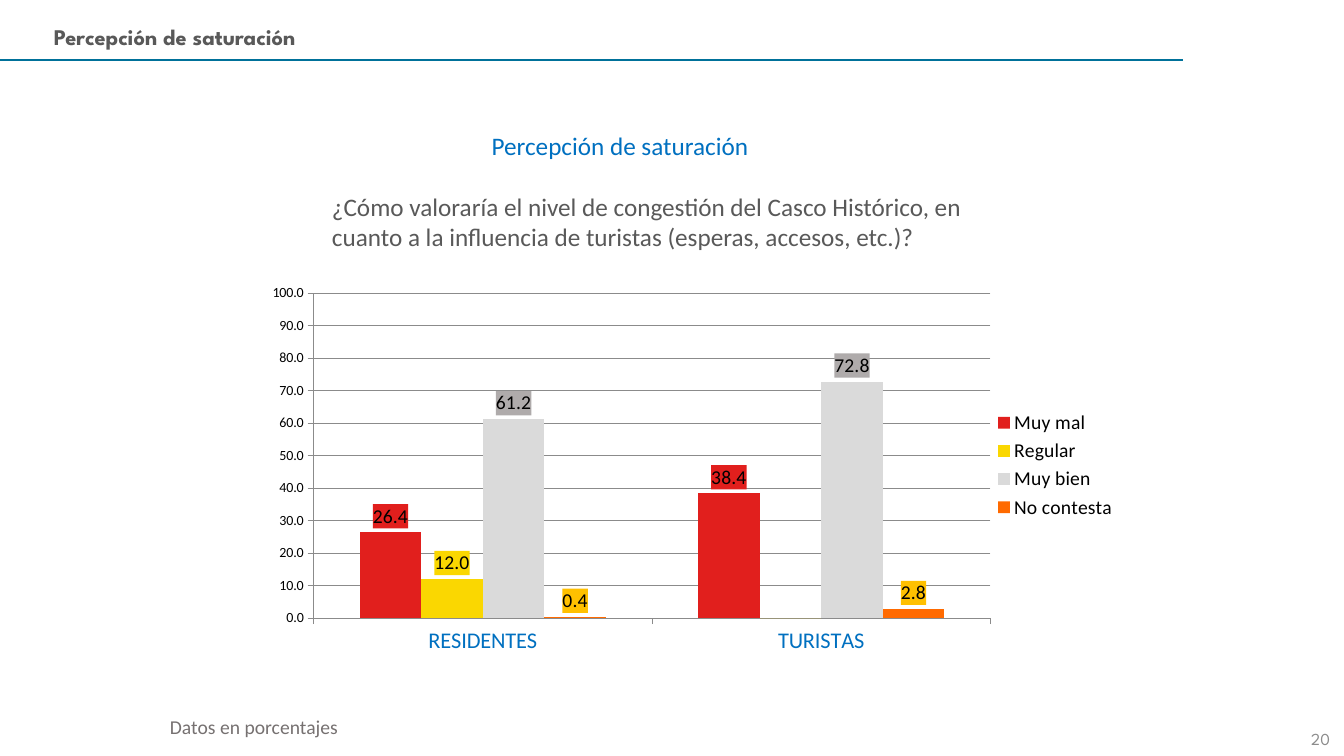
from lxml import etree
from pptx import Presentation
from pptx import util as u
from pptx.chart import data as cd
from pptx.dml import color
from pptx.enum import chart as ch, shapes, text
from pptx.oxml import ns

# left, top, width, height, text, type size, style, alignment, anchor
TEXTS = [
    (44, 18, 1177, 37, "Percepción de saturación", "body", "heading", "LEFT", "TOP"),
    (1038, 714, 302, 40, "20", "small", "number", "RIGHT", "BOTTOM"),
    (160, 125, 920, 40, "Percepción de saturación", "large", "accent", "CENTER", "TOP"),
    (322, 186, 672, 72, "¿Cómo valoraría el nivel de congestión del Casco Histórico, en "
     "cuanto a la influencia de turistas (esperas, accesos, etc.)?", "large", "body", "LEFT", "TOP"),
    (160, 710, 966, 34, "Datos en porcentajes", "medium", "note", "LEFT", "TOP"),
]
RULE = (0, 60, 1183, 60)
CHART_BOX = (258, 258, 869, 414)
PLOT = {"x": 0.064, "y": 0.085, "w": 0.779, "h": 0.785}
GROUPS = ["RESIDENTES", "TURISTAS"]
# name, values, bar colour, label colour
SERIES = [
    ("Muy mal", (26.4, 38.4), "E11F1D", "E11F1D"),
    ("Regular", (12, 0), "FAD701", "FAD701"),
    ("Muy bien", (61.2, 72.8), "DADADA", "AFABAB"),
    ("No contesta", (0.4, 2.8), "FF6A00", "FFC000"),
]
THEME = {
    "sizes": {"tick": 10, "small": 12, "medium": 14, "body": 16, "large": 18},
    "styles": {  # font, colour, bold
        "heading": ("League Spartan", "595959", True),
        "number": ("League Spartan", "8C8C8C", False),
        "accent": ("Calibri", "0070C0", False),
        "body": ("Calibri", "595959", False),
        "note": ("Calibri", "767171", False),
        "chart": ("Calibri", "000000", False),
    },
    "rule": "00719A",
    "grid": "8B8B8B",
}


def px(n):
    return u.Emu(round(n * 914400 / 100.8))


def rgb(value):
    return color.RGBColor.from_string(value)


def set_font(font, size, style):
    font.name, hue, font.bold = THEME["styles"][style]
    font.size = u.Pt(THEME["sizes"][size])
    font.color.rgb = rgb(hue)


def add_text(slide, left, top, width, height, words, size, style, align, anchor):
    tf = slide.shapes.add_textbox(*map(px, (left, top, width, height))).text_frame
    tf.word_wrap = True
    tf.vertical_anchor = getattr(text.MSO_ANCHOR, anchor)
    p = tf.paragraphs[0]
    p.text = words
    p.alignment = getattr(text.PP_ALIGN, align)
    set_font(p.font, size, style)


def add_rule(slide):
    line = slide.shapes.add_connector(shapes.MSO_CONNECTOR.STRAIGHT, *map(px, RULE))
    line.line.color.rgb = rgb(THEME["rule"])
    line.line.width = u.Pt(1)
    etree.SubElement(line._element.spPr, ns.qn("a:effectLst"))


def place_plot(chart):
    """Fix the inner plot area as fractions of the chart."""
    area = chart._chartSpace.chart.plotArea
    for old in area.findall(ns.qn("c:layout")):
        area.remove(old)
    layout = etree.Element(ns.qn("c:layout"))
    manual = etree.SubElement(layout, ns.qn("c:manualLayout"))
    settings = {"layoutTarget": "inner", "xMode": "edge", "yMode": "edge", **PLOT}
    for tag, value in settings.items():
        etree.SubElement(manual, ns.qn("c:" + tag)).set("val", str(value))
    area.insert(0, layout)


def style_labels(series, values, hue):
    """Show values on a coloured ground, leaving out zeros."""
    labels = series.data_labels
    labels.show_value = True
    labels.number_format = "0.0"
    labels.number_format_is_linked = False
    labels.position = ch.XL_LABEL_POSITION.OUTSIDE_END
    set_font(labels.font, "medium", "chart")
    root = labels._element
    sp_pr = etree.Element(ns.qn("c:spPr"))
    fill = etree.SubElement(sp_pr, ns.qn("a:solidFill"))
    etree.SubElement(fill, ns.qn("a:srgbClr")).set("val", hue)
    root.find(ns.qn("c:numFmt")).addnext(sp_pr)
    for i, value in enumerate(values):
        if value == 0:
            label = etree.Element(ns.qn("c:dLbl"))
            etree.SubElement(label, ns.qn("c:idx")).set("val", str(i))
            etree.SubElement(label, ns.qn("c:delete")).set("val", "1")
            root.insert(0, label)


def add_ratings_chart(slide):
    data = cd.CategoryChartData(number_format="0.0")
    data.categories = GROUPS
    for name, values, *_ in SERIES:
        data.add_series(name, values)
    chart = slide.shapes.add_chart(
        ch.XL_CHART_TYPE.COLUMN_CLUSTERED, *map(px, CHART_BOX), data).chart
    chart.has_title = False
    set_font(chart.font, "tick", "chart")
    chart.has_legend = True
    chart.legend.position = ch.XL_LEGEND_POSITION.RIGHT
    chart.legend.include_in_layout = False
    set_font(chart.legend.font, "medium", "chart")

    cat, val = chart.category_axis, chart.value_axis
    val.minimum_scale, val.maximum_scale, val.major_unit = 0, 100, 10
    val.has_major_gridlines = True
    val.tick_labels.number_format = "0.0"
    val.tick_labels.number_format_is_linked = False
    for axis, size, style in ((cat, "body", "accent"), (val, "tick", "chart")):
        axis.major_tick_mark = ch.XL_TICK_MARK.OUTSIDE
        set_font(axis.tick_labels.font, size, style)
    for part in (cat, val, val.major_gridlines):
        part.format.line.color.rgb = rgb(THEME["grid"])
        part.format.line.width = u.Pt(0.75)

    plot = chart.plots[0]
    plot.gap_width, plot.overlap, plot.vary_by_categories = 150, 0, False
    for series, (_, values, bar, label) in zip(plot.series, SERIES):
        series.format.fill.solid()
        series.format.fill.fore_color.rgb = rgb(bar)
        series.invert_if_negative = False
        style_labels(series, values, label)
    place_plot(chart)


def main():
    prs = Presentation()
    prs.slide_width, prs.slide_height = px(1344), px(756)
    slide = prs.slides.add_slide(prs.slide_layouts[6])
    add_rule(slide)
    for item in TEXTS:
        add_text(slide, *item)
    add_ratings_chart(slide)
    prs.save("out.pptx")


if __name__ == "__main__":
    main()
